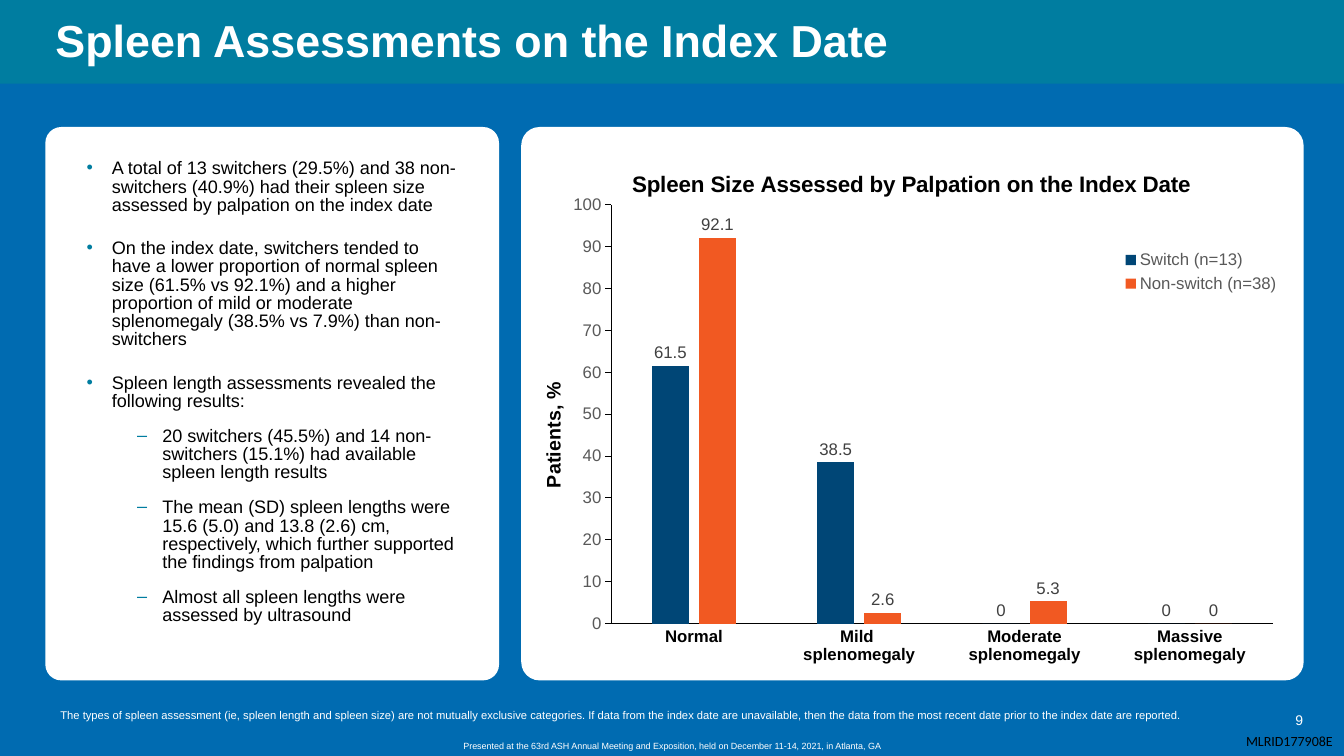
from collections import namedtuple
from dataclasses import dataclass

from lxml.etree import SubElement
from pptx import Presentation
from pptx.chart.data import CategoryChartData
from pptx.dml.color import RGBColor
from pptx.enum.chart import XL_CHART_TYPE, XL_LABEL_POSITION, XL_LEGEND_POSITION, XL_TICK_MARK
from pptx.enum.shapes import MSO_SHAPE
from pptx.enum.text import MSO_ANCHOR, MSO_AUTO_SIZE, PP_ALIGN
from pptx.oxml import parse_xml
from pptx.oxml.ns import nsdecls, qn
from pptx.util import Inches, Pt


@dataclass(frozen=True)
class Theme:
    blue: str = "006BB1"
    teal: str = "007DA0"
    white: str = "FFFFFF"
    black: str = "000000"
    grey: str = "595959"
    label_grey: str = "404040"
    switch: str = "004676"
    non_switch: str = "F15922"
    font: str = "Arial"
    code_font: str = "Calibri"
    title: float = 32
    chart_title: float = 16
    axis_title: float = 14
    body: float = 12.9
    chart_text: float = 12
    venue: float = 11
    small: float = 10
    note: float = 8


THEME = Theme()
Box = namedtuple("Box", "left top width height")

FINDINGS = [
    (0, 12, "A total of 13 switchers (29.5%) and 38 non-switchers (40.9%) had their spleen size "
            "assessed by palpation on the index date"),
    (0, 12, "On the index date, switchers tended to have a lower proportion of normal spleen size "
            "(61.5% vs 92.1%) and a higher proportion of mild or moderate splenomegaly "
            "(38.5% vs 7.9%) than non-switchers"),
    (0, 6, "Spleen length assessments revealed the following results:"),
    (1, 6, "20 switchers (45.5%) and 14 non-switchers (15.1%) had available spleen length results"),
    (1, 6, "The mean (SD) spleen lengths were 15.6 (5.0) and 13.8 (2.6) cm, respectively, "
           "which further supported the findings from palpation"),
    (1, 6, "Almost all spleen lengths were assessed by ultrasound"),
]
SEVERITIES = ["Normal", "Mild \nsplenomegaly", "Moderate splenomegaly", "Massive splenomegaly"]
GROUPS = [
    ("Switch (n=13)", (61.5, 38.5, 0, 0), THEME.switch),
    ("Non-switch (n=38)", (92.1, 2.6, 5.3, 0), THEME.non_switch),
]


def rgb(color):
    return RGBColor.from_string(color)


def style(font, size, color, bold=False, family=THEME.font):
    font.size, font.bold, font.name = Pt(size), bold, family
    font.color.rgb = rgb(color)


def write(paragraph, text, size, color, bold=False, family=THEME.font,
          align=PP_ALIGN.LEFT, spacing=None, before=0, after=0, baseline=None):
    paragraph.alignment = align
    paragraph.line_spacing = spacing
    paragraph.space_before, paragraph.space_after = Pt(before), Pt(after)
    run = paragraph.add_run()
    run.text = text
    style(run.font, size, color, bold, family)
    if baseline:
        run.font._element.set("baseline", str(baseline))


def move(shape, box):
    shape.left, shape.top, shape.width, shape.height = map(Inches, box)


def add_panel(slide, kind, box, color):
    panel = slide.shapes.add_shape(kind, *map(Inches, box))
    panel.shadow.inherit = False
    panel.fill.solid()
    panel.fill.fore_color.rgb = rgb(color)
    panel.line.fill.background()
    return panel


def add_card(slide, box, rounding):
    add_panel(slide, MSO_SHAPE.ROUNDED_RECTANGLE, box, THEME.white).adjustments[0] = rounding


def add_caption(slide, box, text, anchor=MSO_ANCHOR.TOP, wrap=True, **text_format):
    frame = slide.shapes.add_textbox(*map(Inches, box)).text_frame
    frame.word_wrap, frame.vertical_anchor = wrap, anchor
    write(frame.paragraphs[0], text, **text_format)


def add_bullet(paragraph, level):
    properties = paragraph._p.get_or_add_pPr()
    properties.set("marL", str(Inches(0.25 + 0.5 * level)))
    properties.set("indent", str(Inches(-0.25)))
    color = SubElement(properties, qn("a:buClr"))
    SubElement(color, qn("a:srgbClr")).set("val", THEME.teal)
    SubElement(properties, qn("a:buFont")).set("typeface", THEME.font)
    SubElement(properties, qn("a:buChar")).set("char", "•–"[level])


def build_header(slide, box):
    add_panel(slide, MSO_SHAPE.RECTANGLE, box, THEME.teal)
    heading = slide.shapes.title
    slide.shapes._spTree.append(heading._element)
    move(heading, Box(box.left + 0.45, box.top + 0.06, 11.91, 0.79))
    frame = heading.text_frame
    frame.vertical_anchor, frame.auto_size = MSO_ANCHOR.MIDDLE, MSO_AUTO_SIZE.NONE
    write(frame.paragraphs[0], "Spleen Assessments on the Index Date",
          size=THEME.title, color=THEME.white, bold=True, spacing=0.9)


def build_findings(slide, box):
    add_card(slide, box, 0.035)
    findings = slide.placeholders[1]
    slide.shapes._spTree.append(findings._element)
    move(findings, Box(box.left + 0.31, box.top + 0.28, box.width - 0.61, box.height - 0.42))
    frame = findings.text_frame
    frame.auto_size, frame.vertical_anchor = MSO_AUTO_SIZE.NONE, MSO_ANCHOR.TOP
    for index, (level, after, finding) in enumerate(FINDINGS):
        paragraph = frame.add_paragraph() if index else frame.paragraphs[0]
        paragraph.level = level
        write(paragraph, finding, size=THEME.body, color=THEME.black, spacing=0.84,
              before=6 if index else 0, after=after)
        add_bullet(paragraph, level)


def set_layout(part, after=None, inner=False, **fractions):
    for layout in part.findall(qn("c:layout")):
        part.remove(layout)
    target = '<c:layoutTarget val="inner"/>' if inner else ""
    modes = "".join(f'<c:{axis}Mode val="edge"/>' for axis in "xy")
    values = "".join(f'<c:{key} val="{value}"/>' for key, value in fractions.items())
    layout = parse_xml(f'<c:layout {nsdecls("c")}><c:manualLayout>{target}{modes}{values}'
                       '</c:manualLayout></c:layout>')
    part.insert(part.index(part.find(qn(after))) + 1 if after else 0, layout)


def style_axis(axis, color, bold, tick):
    style(axis.tick_labels.font, THEME.chart_text, color, bold)
    axis.has_major_gridlines = False
    axis.major_tick_mark, axis.minor_tick_mark = tick, XL_TICK_MARK.NONE
    axis.format.line.color.rgb = rgb(THEME.black)
    axis.format.line.width = Pt(0.75)


def build_chart(slide, box):
    add_card(slide, box, 0.033)
    data = CategoryChartData()
    data.categories = SEVERITIES
    for name, values, _ in GROUPS:
        data.add_series(name, values)
    place = Box(box.left + 0.08, box.top + 0.17, box.width - 0.23, box.height - 0.21)
    chart = slide.shapes.add_chart(XL_CHART_TYPE.COLUMN_CLUSTERED, *map(Inches, place), data).chart
    style(chart.font, THEME.small, THEME.black, family=THEME.code_font)

    write(chart.chart_title.text_frame.paragraphs[0],
          "Spleen Size Assessed by Palpation on the Index Date",
          size=THEME.chart_title, color=THEME.black, bold=True, align=PP_ALIGN.CENTER)
    chart.chart_title.include_in_layout = False
    set_layout(chart.chart_title._element, "c:tx", x=0.13, y=0.04)

    style_axis(chart.category_axis, THEME.black, True, XL_TICK_MARK.NONE)
    patients = chart.value_axis
    style_axis(patients, THEME.grey, False, XL_TICK_MARK.OUTSIDE)
    patients.minimum_scale, patients.maximum_scale, patients.major_unit = 0, 100, 10
    axis_title = patients.axis_title
    write(axis_title.text_frame.paragraphs[0], "Patients, %", size=THEME.axis_title,
          color=THEME.black, bold=True, align=PP_ALIGN.CENTER)
    rotation = axis_title.text_frame._txBody.find(qn("a:bodyPr"))
    rotation.set("rot", "-5400000")
    rotation.set("vert", "horz")
    set_layout(axis_title._element, "c:tx", x=0.01, y=0.44)

    chart.has_legend = True
    legend = chart.legend
    legend.position, legend.include_in_layout = XL_LEGEND_POSITION.BOTTOM, False
    style(legend.font, THEME.chart_text, THEME.grey)
    set_layout(legend._element, "c:legendPos", x=0.78, y=0.19, w=0.21, h=0.1)

    plot = chart.plots[0]
    plot.gap_width, plot.overlap, plot.vary_by_categories = 219, -27, False
    for series, (_, _, color) in zip(plot.series, GROUPS):
        series.format.fill.solid()
        series.format.fill.fore_color.rgb = rgb(color)
        labels = series.data_labels
        labels.show_value, labels.position = True, XL_LABEL_POSITION.OUTSIDE_END
        style(labels.font, THEME.chart_text, THEME.label_grey)
    set_layout(chart.element.find(".//" + qn("c:plotArea")), inner=True,
               x=0.108, y=0.114, w=0.871, h=0.787)


def build_footer(slide, box):
    add_caption(slide, Box(box.left + 3.78, box.top + 0.52, 5.77, 0.22),
                "Presented at the 63rd ASH Annual Meeting and Exposition, "
                "held on December 11-14, 2021, in Atlanta, GA",
                size=THEME.venue, color=THEME.white, align=PP_ALIGN.CENTER, baseline=30000)
    add_caption(slide, Box(box.left + 0.5, box.top, 12.27, 0.45),
                "The types of spleen assessment (ie, spleen length and spleen size) are not mutually "
                "exclusive categories. If data from the index date are unavailable, then the data "
                "from the most recent date prior to the index date are reported.",
                anchor=MSO_ANCHOR.BOTTOM, size=THEME.note, color=THEME.white)
    add_caption(slide, Box(box.left + 12.62, box.top + 0.18, 0.53, 0.41), "9",
                anchor=MSO_ANCHOR.MIDDLE, size=THEME.small, color=THEME.white, align=PP_ALIGN.CENTER)
    add_caption(slide, Box(box.left + 12.26, box.top + 0.46, 1.08, 0.27), "MLRID177908E", wrap=False,
                size=THEME.small, color=THEME.black, family=THEME.code_font)


def main():
    deck = Presentation()
    deck.slide_width, deck.slide_height = Inches(13.33), Inches(7.5)
    slide = deck.slides.add_slide(deck.slide_layouts[1])
    slide.background.fill.solid()
    slide.background.fill.fore_color.rgb = rgb(THEME.blue)
    build_header(slide, Box(0, -0.03, 13.33, 0.86))
    build_findings(slide, Box(0.45, 1.26, 4.5, 5.49))
    build_chart(slide, Box(5.17, 1.26, 7.76, 5.49))
    build_footer(slide, Box(0, 6.76, 13.33, 0.74))
    deck.save("out.pptx")


if __name__ == "__main__":
    main()
